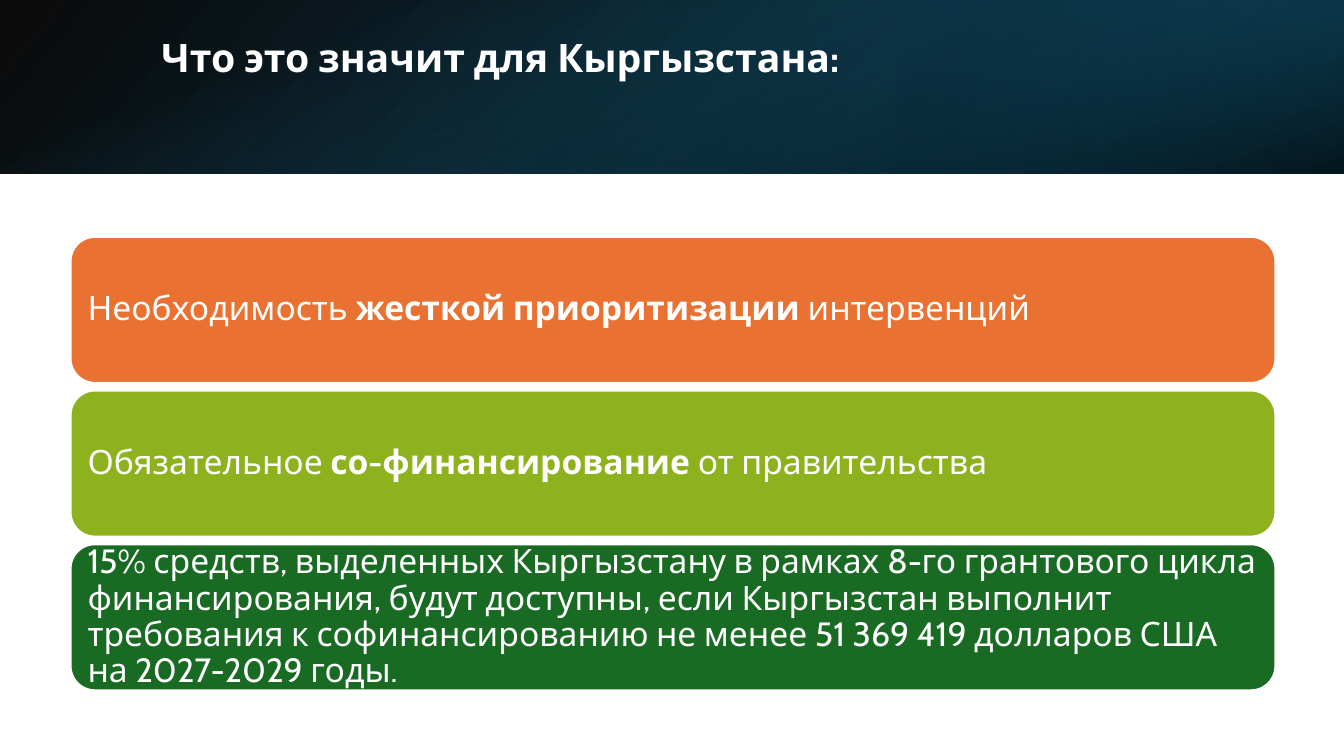
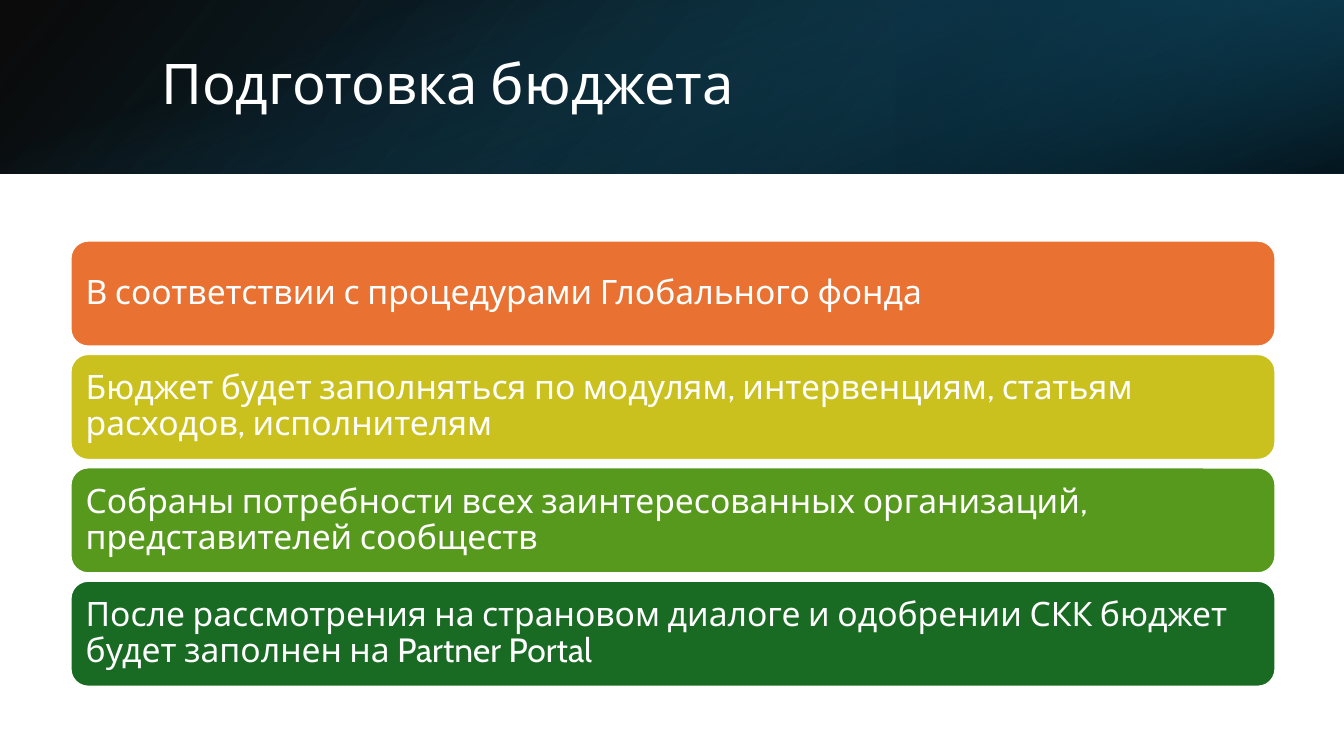
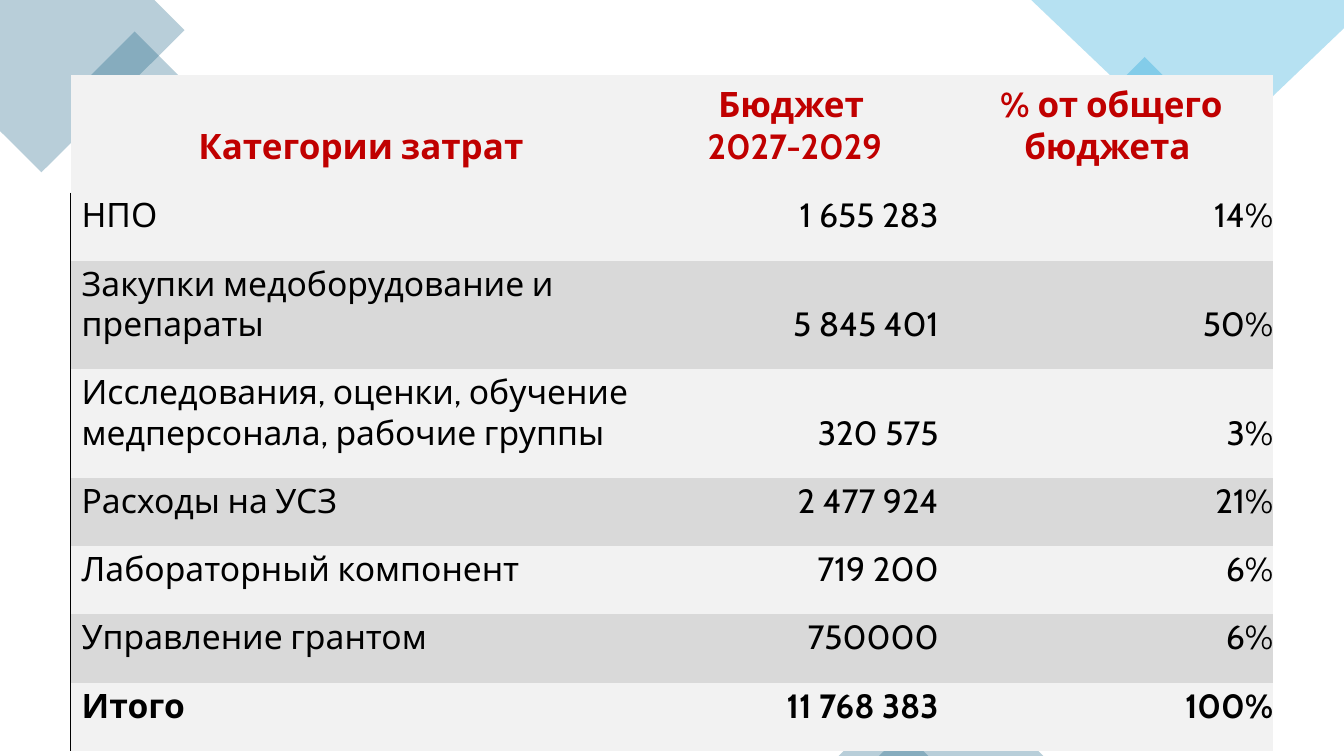
from dataclasses import dataclass

from lxml.etree import SubElement
from pptx import Presentation
from pptx.dml.color import RGBColor
from pptx.enum.shapes import MSO_SHAPE
from pptx.enum.text import MSO_ANCHOR, MSO_AUTO_SIZE, PP_ALIGN
from pptx.oxml.ns import qn
from pptx.util import Emu, Inches, Pt

WIDE, HIGH = Inches(13.33), Inches(7.5)


@dataclass(frozen=True)
class Theme:
    font: str = "Cabin"
    white: str = "FFFFFF"
    black: str = "000000"
    red: str = "C00000"
    pale: str = "F2F2F2"
    gray: str = "D9D9D9"
    teal: str = "156082"
    sky: str = "0F9ED5"
    orange: str = "E97132"
    yellow: str = "CBC11E"
    lime: str = "8EB21E"
    green: str = "56991D"
    forest: str = "196B24"
    title: int = 40
    lead: int = 28
    head: int = 25
    body: int = 24


T = Theme()


def col(share: float) -> Emu:
    """Percent of the slide width."""
    return Emu(round(WIDE * share / 100))


def row(share: float) -> Emu:
    """Percent of the slide height."""
    return Emu(round(HIGH * share / 100))


@dataclass(frozen=True)
class Box:
    """A place on the slide, in percent of its width and height."""
    x: float
    y: float
    w: float
    h: float

    def frame(self, turn: int = 0) -> tuple:
        x, y, w, h = col(self.x), row(self.y), col(self.w), row(self.h)
        if turn % 180 == 90:  # a quarter turn swaps the sides about the centre
            x, y, w, h = x + (w - h) // 2, y + (h - w) // 2, h, w
        return Emu(x), Emu(y), Emu(w), Emu(h)


@dataclass(frozen=True)
class Stop:
    at: float
    color: str
    alpha: int = 100


@dataclass(frozen=True)
class Layer:
    box: Box
    stops: tuple
    angle: int
    turn: int = 0
    flip: bool = False


@dataclass(frozen=True)
class Card:
    text: str
    color: str


@dataclass(frozen=True)
class Form:
    kind: MSO_SHAPE
    box: Box
    color: str
    turn: int = 0


@dataclass(frozen=True)
class Patch:
    points: tuple
    color: str


TITLE = Box(11.25, 5.07, 82.37, 12.8)
BAND = Box(0, 0, 100, 22.93)
LAYERS = (
    Layer(BAND, (Stop(0, T.black, 96), Stop(1, "104862")), 140, flip=True),
    Layer(Box(66.67, 0, 33.33, 22.93),
          (Stop(0.19, "0B3041", 68), Stop(1, T.teal, 79)), 320, 180, True),
    Layer(BAND, (Stop(0.23, T.teal, 0), Stop(0.99, T.black, 74)), 340, 90),
)

# Cards: one stack, centred on MID
LEFT, SPAN, MID, GAP = 5.25, 89.65, 61.33, 1
NEEDS = (
    Card("Необходимость *жесткой приоритизации* интервенций", T.orange),
    Card("Обязательное *со-финансирование* от правительства", T.lime),
    Card("15% средств, выделенных Кыргызстану в рамках 8-го грантового цикла "
         "финансирования, будут доступны, если Кыргызстан выполнит требования "
         "к софинансированию не менее 51 369 419 долларов США "
         "на 2027-2029 годы.", T.forest),
)
STEPS = (
    Card("В соответствии с процедурами Глобального фонда", T.orange),
    Card("Бюджет будет заполняться по модулям, интервенциям, статьям "
         "расходов, исполнителям", T.yellow),
    Card("Собраны потребности всех заинтересованных организаций, "
         "представителей сообществ", T.green),
    Card("После рассмотрения на страновом диалоге и одобрении СКК бюджет "
         "будет заполнен на Partner Portal", T.forest),
)

# Corner decor of the table slide
PATCHES = (
    Patch(((0, 0), (11.48, 0), (13.73, 4), (3.08, 22.8), (0, 17.33)), T.teal),
    Patch(((76.73, 0), (100, 0), (100, 3.73), (89.48, 21.6)), T.sky),
)
FORMS = (
    Form(MSO_SHAPE.RECTANGLE, Box(7.35, 6.13, 5.33, 9.47), T.teal, 315),
    Form(MSO_SHAPE.RECTANGLE, Box(82.35, 9.6, 5.63, 10), T.sky, 315),
    Form(MSO_SHAPE.ISOSCELES_TRIANGLE, Box(65.4, 89.2, 12.23, 10.8), T.teal),
    Form(MSO_SHAPE.ISOSCELES_TRIANGLE, Box(62.4, 94.13, 6.68, 5.87), T.teal),
)
VEIL = 30

COLS = (42.38, 22.2, 24.9)
ROWS = (15.6, 8.67, 8.67, 12.8, 8.67, 8.67, 8.67, 8.67)
COSTS = (
    ("Категории затрат", "Бюджет \n2027-2029", "% от общего бюджета "),
    ("НПО", "1 655 283", "14%"),
    ("Закупки медоборудование и препараты", "5 845 401", "50%"),
    ("Исследования, оценки, обучение медперсонала, рабочие группы",
     "320 575", "3%"),
    ("Расходы на УСЗ", "2 477 924", "21%"),
    ("Лабораторный компонент", "719 200", "6%"),
    ("Управление грантом", "750000", "6%"),
    ("*Итого*", "*11 768 383*", "*100%*"),
)
PLAIN = "{2D5ABB26-0587-4C30-8999-92F81FD0307C}"  # style without grid


def write(frame, text: str, *, size: int = T.body, color: str = T.white,
          bold: bool = False, align=PP_ALIGN.LEFT, space: float = 1.0) -> None:
    """Fill a text frame; *stars* mark bold runs, line ends split paragraphs."""
    for i, line in enumerate(text.split("\n")):
        para = frame.paragraphs[0] if i == 0 else frame.add_paragraph()
        para.alignment, para.line_spacing = align, space
        for j, part in enumerate(line.split("*")):
            if part:
                run = para.add_run()
                run.text = part
                run.font.name, run.font.size = T.font, Pt(size)
                run.font.bold = bold or j % 2 == 1
                run.font.color.rgb = RGBColor.from_string(color)


def paint(fill, color: str) -> None:
    fill.solid()
    fill.fore_color.rgb = RGBColor.from_string(color)


def fade(shape, *alphas: int) -> None:
    """Set the opacity of the fill colours, in percent."""
    tints = list(shape._element.spPr.iter(qn("a:srgbClr")))
    for tint, alpha in zip(tints, alphas):
        SubElement(tint, qn("a:alpha"), val=str(alpha * 1000))


def strip(shape) -> None:
    shape.shadow.inherit = False
    shape.line.fill.background()


def add_form(slide, kind, box: Box, turn: int = 0):
    shape = slide.shapes.add_shape(kind, *box.frame(turn))
    shape.rotation = turn
    strip(shape)
    return shape


def add_layer(slide, layer: Layer) -> None:
    shape = add_form(slide, MSO_SHAPE.RECTANGLE, layer.box, layer.turn)
    if layer.flip:
        shape._element.spPr.xfrm.set("flipH", "1")
    shape.fill.gradient()
    shape.fill.gradient_angle = 360 - layer.angle
    for stop, spot in zip(layer.stops, shape.fill.gradient_stops):
        spot.position = stop.at
        spot.color.rgb = RGBColor.from_string(stop.color)
    fade(shape, *(stop.alpha for stop in layer.stops))


def add_card(slide, card: Card, box: Box) -> None:
    shape = add_form(slide, MSO_SHAPE.ROUNDED_RECTANGLE, box)
    paint(shape.fill, card.color)
    paint(shape.line.fill, T.white)
    shape.line.width = Pt(1.5)
    frame = shape.text_frame
    frame.word_wrap, frame.vertical_anchor = True, MSO_ANCHOR.MIDDLE
    frame.margin_left = frame.margin_right = Inches(0.1)
    frame.margin_top = frame.margin_bottom = Inches(0.1)
    write(frame, card.text, space=0.9)


def add_stack(deck, title: str, cards: tuple, tall: float, *,
              size: int = T.title, bold: bool = False,
              anchor=MSO_ANCHOR.MIDDLE) -> None:
    """A slide with the dark band, a title and a stack of cards."""
    slide = deck.slides.add_slide(deck.slide_layouts[5])
    for layer in LAYERS:
        add_layer(slide, layer)
    # Title, brought in front of the band
    head = slide.shapes.title
    slide.shapes._spTree.append(head._element)
    head.left, head.top, head.width, head.height = TITLE.frame()
    frame = head.text_frame
    frame.word_wrap, frame.auto_size = True, MSO_AUTO_SIZE.NONE
    frame.vertical_anchor = anchor
    if anchor == MSO_ANCHOR.TOP:
        frame.margin_top = 0
    write(frame, title, size=size, bold=bold, space=0.9)
    # Cards
    step = tall + GAP
    top = MID - (len(cards) * step - GAP) / 2
    for i, card in enumerate(cards):
        add_card(slide, card, Box(LEFT, top + i * step, SPAN, tall))


def add_patch(slide, patch: Patch):
    first, *rest = [(col(x), row(y)) for x, y in patch.points]
    pen = slide.shapes.build_freeform(*first, scale=1.0)
    pen.add_line_segments(rest, close=True)
    shape = pen.convert_to_shape()
    strip(shape)
    return shape


def edge(cell) -> None:
    """Black line on the left side of a cell."""
    props = cell._tc.get_or_add_tcPr()
    line = SubElement(props, qn("a:lnL"), w=str(Pt(1)))
    tint = SubElement(SubElement(line, qn("a:solidFill")), qn("a:srgbClr"))
    tint.set("val", T.black)
    props.insert(0, line)


def add_costs(slide) -> None:
    box = Box(LEFT, 9.87, sum(COLS), sum(ROWS))
    table = slide.shapes.add_table(len(ROWS), len(COLS), *box.frame()).table
    table.first_row = table.horz_banding = False
    table._tbl.tblPr.find(qn("a:tableStyleId")).text = PLAIN
    for part, share in zip(table.columns, COLS):
        part.width = col(share)
    for part, share in zip(table.rows, ROWS):
        part.height = row(share)
    for r, line in enumerate(COSTS):
        for c, text in enumerate(line):
            cell = table.cell(r, c)
            cell.vertical_anchor = MSO_ANCHOR.BOTTOM
            cell.margin_left, cell.margin_right = Inches(0.11), 0
            cell.margin_top, cell.margin_bottom = Inches(0.03), Inches(0.24)
            paint(cell.fill, T.gray if r and r % 2 == 0 else T.pale)
            if r == 0:
                write(cell.text_frame, text, size=T.head, color=T.red,
                      bold=True, align=PP_ALIGN.CENTER)
                continue
            side = PP_ALIGN.RIGHT if c else PP_ALIGN.LEFT
            write(cell.text_frame, text, color=T.black, align=side)
            if c == 0:
                edge(cell)


def add_budget(deck) -> None:
    """The table slide with its corner decor."""
    slide = deck.slides.add_slide(deck.slide_layouts[6])
    decor = [(add_patch(slide, p), p.color) for p in PATCHES]
    decor += [(add_form(slide, f.kind, f.box, f.turn), f.color) for f in FORMS]
    for shape, color in decor:
        paint(shape.fill, color)
        fade(shape, VEIL)
    add_costs(slide)


def main() -> None:
    deck = Presentation()
    deck.slide_width, deck.slide_height = WIDE, HIGH
    add_stack(deck, "Что это значит для Кыргызстана:", NEEDS, 19.33,
              size=T.lead, bold=True, anchor=MSO_ANCHOR.TOP)
    add_stack(deck, "Подготовка бюджета", STEPS, 14)
    add_budget(deck)
    deck.save("out.pptx")


if __name__ == "__main__":
    main()
